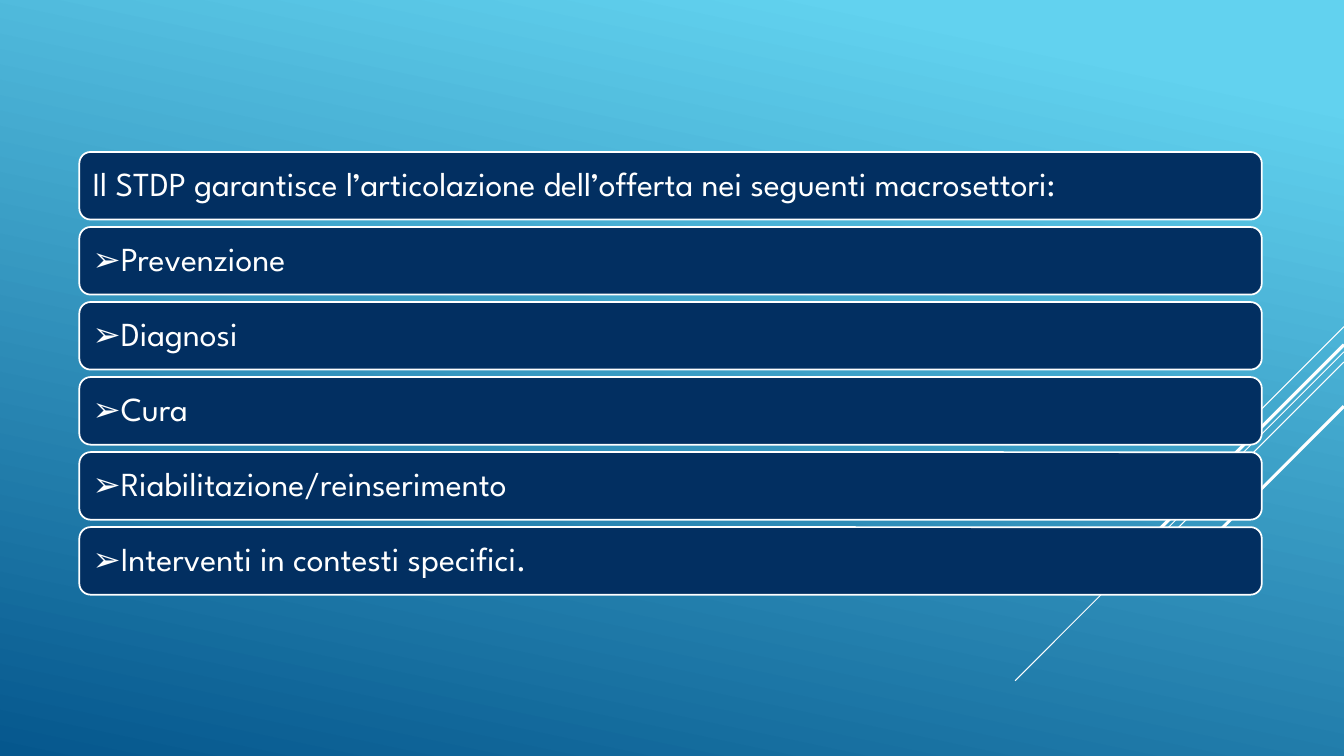
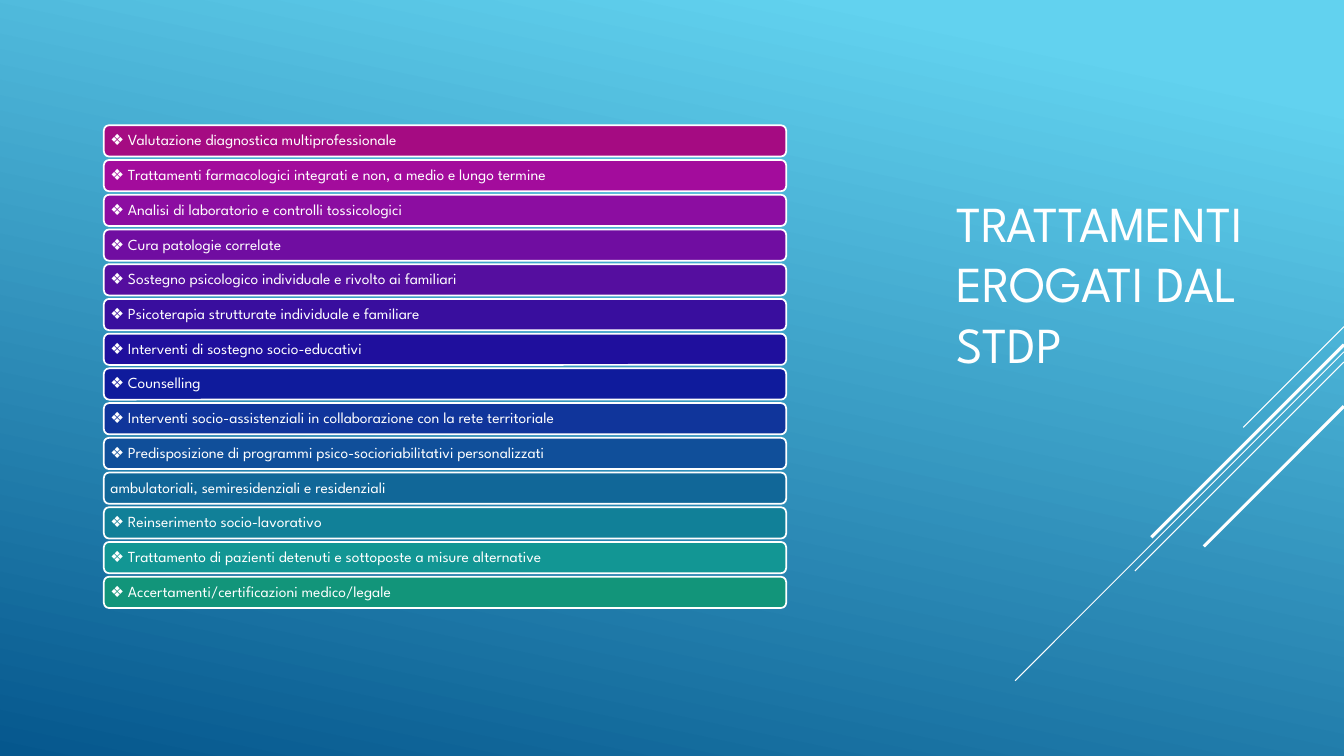
"""Build two slides on the sectors and treatments offered by the STDP."""
from lxml.etree import SubElement
from pptx import Presentation
from pptx.dml.color import RGBColor as Rgb
from pptx.enum.shapes import MSO_CONNECTOR as Link, MSO_SHAPE as Shape
from pptx.enum.text import MSO_ANCHOR as Anchor, PP_ALIGN as Align
from pptx.oxml.ns import qn
from pptx.util import Pt

WIDE, HIGH = 960, 540
FONT = "League Spartan"
WHITE = Rgb(0xFF, 0xFF, 0xFF)
NAVY = Rgb(0x02, 0x2F, 0x61)
SKY = Rgb(0x62, 0xD2, 0xEF)
DEEP = Rgb(0x05, 0x57, 0x8D)

RAYS = [
    (233.3, 72, 0.75),
    (251.3, 234.9, 0.75),
    (258.6, 149.3, 0.75),
    (246.2, 137.6, 2.25),
    (290.2, 100.1, 2.25),
]

SECTORS = [
    ("Il STDP garantisce l’articolazione dell’offerta nei seguenti macrosettori:", NAVY),
    ("➢Prevenzione", NAVY),
    ("➢Diagnosi", NAVY),
    ("➢Cura", NAVY),
    ("➢Riabilitazione/reinserimento", NAVY),
    ("➢Interventi in contesti specifici.", NAVY),
]

CARES = [
    ("❖ Valutazione diagnostica multiprofessionale", Rgb(0xA5, 0x0B, 0x82)),
    ("❖ Trattamenti farmacologici integrati e non, a medio e lungo termine", Rgb(0xA3, 0x0C, 0x9C)),
    ("❖ Analisi di laboratorio e controlli tossicologici", Rgb(0x8C, 0x0D, 0xA1)),
    ("❖ Cura patologie correlate", Rgb(0x70, 0x0D, 0xA1)),
    ("❖ Sostegno psicologico individuale e rivolto ai familiari", Rgb(0x55, 0x0E, 0x9F)),
    ("❖ Psicoterapia strutturate individuale e familiare", Rgb(0x39, 0x0E, 0x9E)),
    ("❖ Interventi di sostegno socio-educativi", Rgb(0x1F, 0x0F, 0x9D)),
    ("❖ Counselling", Rgb(0x0F, 0x1B, 0x9C)),
    ("❖ Interventi socio-assistenziali in collaborazione con la rete territoriale", Rgb(0x10, 0x35, 0x9B)),
    ("❖ Predisposizione di programmi psico-socioriabilitativi personalizzati", Rgb(0x10, 0x4F, 0x9A)),
    ("ambulatoriali, semiresidenziali e residenziali", Rgb(0x11, 0x67, 0x98)),
    ("❖ Reinserimento socio-lavorativo", Rgb(0x11, 0x80, 0x98)),
    ("❖ Trattamento di pazienti detenuti e sottoposte a misure alternative", Rgb(0x12, 0x96, 0x94)),
    ("❖ Accertamenti/certificazioni medico/legale", Rgb(0x12, 0x95, 0x7A)),
]


def style(item, look):
    """Set each attribute in look on item."""
    for name, value in look.items():
        setattr(item, name, value)


def write(shape, text, size, pads, space):
    """Put left-aligned white text in a shape, with (side, end) pads."""
    side, end = map(Pt, pads)
    frame = shape.text_frame
    style(frame, {
        "word_wrap": True, "vertical_anchor": Anchor.MIDDLE,
        "margin_left": side, "margin_right": side,
        "margin_top": end, "margin_bottom": end,
    })
    para = frame.paragraphs[0]
    style(para, {"text": text, "alignment": Align.LEFT, "line_spacing": space})
    font = para.runs[0].font
    style(font, {"name": FONT, "size": Pt(size)})
    font.color.rgb = WHITE


def draw_rays(slide):
    """Draw the diagonal lines that run down from the right edge."""
    for top, run, width in RAYS:
        ray = slide.shapes.add_connector(
            Link.STRAIGHT, Pt(WIDE), Pt(top), Pt(WIDE - run), Pt(top + run))
        ray.line.color.rgb = WHITE
        ray.line.width = Pt(width)
        SubElement(ray._element.spPr, qn("a:effectLst"))


def add_base(deck):
    """Add a blank slide with the shared gradient and rays."""
    slide = deck.slides.add_slide(deck.slide_layouts[6])
    fill = slide.background.fill
    fill.gradient()
    fill.gradient_angle = 258
    for stop, (place, color) in zip(fill.gradient_stops, [(0.1, SKY), (1, DEEP)]):
        stop.position = place
        stop.color.rgb = color
    draw_rays(slide)
    return slide


def draw_bars(slide, box, rows, share, size, pad):
    """Stack one bar per row in box; share is bar height over pitch."""
    left, top, width, height = box
    pitch = height / (len(rows) - 1 + share)
    for i, (text, color) in enumerate(rows):
        bar = slide.shapes.add_shape(
            Shape.ROUNDED_RECTANGLE, Pt(left), Pt(top + i * pitch),
            Pt(width), Pt(pitch * share))
        bar.shadow.inherit = False
        bar.fill.solid()
        bar.fill.fore_color.rgb = color
        bar.line.color.rgb = WHITE
        bar.line.width = Pt(1.25)
        write(bar, text, size, (pad, pad), 0.9)


def draw_title(slide, box, text):
    """Place the slide title in box."""
    title = slide.shapes.add_textbox(*map(Pt, box))
    write(title, text, 36, (7.2, 3.6), 1.0)


def main():
    """Build and save the deck."""
    deck = Presentation()
    style(deck, {"slide_width": Pt(WIDE), "slide_height": Pt(HIGH)})
    draw_bars(add_base(deck), (56.7, 108.6, 844.6, 316.2), SECTORS, 0.9, 24, 7.2)
    cares = add_base(deck)
    draw_title(cares, (676, 74.2, 239.8, 255.6), "TRATTAMENTI EROGATI DAL STDP")
    draw_bars(cares, (74.2, 89.5, 487.4, 344.8), CARES, 0.9, 11, 3.6)
    deck.save("out.pptx")


if __name__ == "__main__":
    main()
